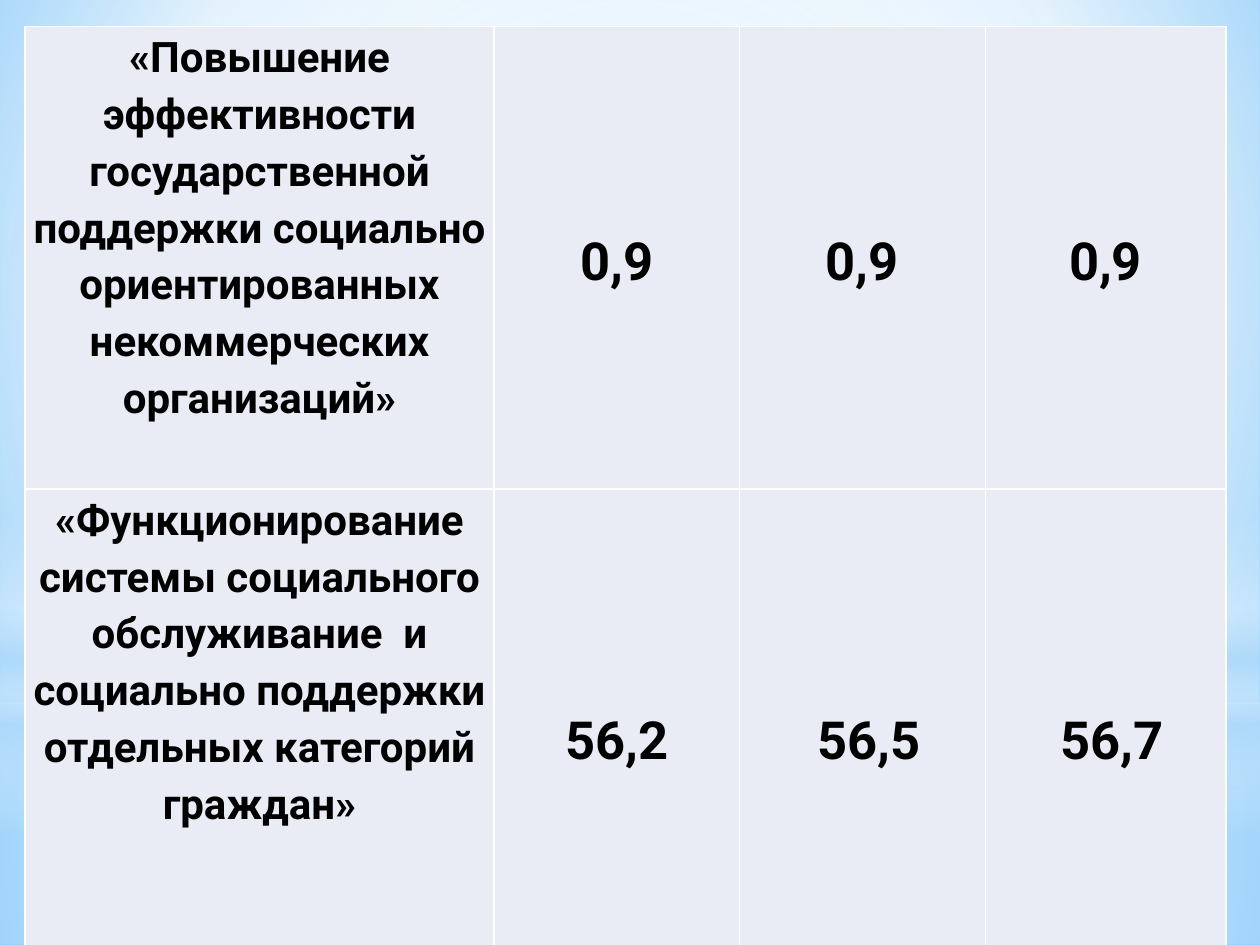
from lxml.etree import SubElement
from pptx import Presentation
from pptx.dml.color import RGBColor
from pptx.enum.shapes import MSO_SHAPE
from pptx.enum.text import MSO_ANCHOR, PP_ALIGN
from pptx.oxml.ns import qn
from pptx.util import Pt

COLORS = {
    "white": "FFFFFF",
    "sky": "9ED5FF",
    "deep_sky": "5BB9FF",
    "haze": "B4DCFA",
    "cell": "E9EBF5",
    "text": "000000",
}
FONT = "Roboto"
WIDTH, HEIGHT = 720, 540
CENTER = (50, 50, 50, 50)
COLUMN_WIDTHS = (267.84, 140.4, 140.4, 137.52)
ROW_HEIGHTS = (264.24, 283.68)
ROWS = (
    ("«Повышение эффективности государственной поддержки социально "
     "ориентированных некоммерческих организаций»", "0,9", "0,9", "0,9"),
    ("«Функционирование системы социального обслуживание  и социально "
     "поддержки отдельных категорий граждан»", "56,2", " 56,5", " 56,7"),
)


def set_gradient(fill, element, stops, focus=None):
    """Fill with (position, color, opacity) stops in percent.

    The gradient is circular around the focus insets, or vertical without one.
    """
    fill.gradient()
    gradient = element.find(".//" + qn("a:gradFill"))
    for child in list(gradient):
        gradient.remove(child)
    stop_list = SubElement(gradient, qn("a:gsLst"))
    for position, color, opacity in stops:
        stop = SubElement(stop_list, qn("a:gs"), pos=str(position * 1000))
        value = SubElement(stop, qn("a:srgbClr"), val=COLORS[color])
        if opacity < 100:
            SubElement(value, qn("a:alpha"), val=str(opacity * 1000))
    if focus:
        circle = SubElement(gradient, qn("a:path"), path="circle")
        insets = {side: str(inset * 1000) for side, inset in zip("ltrb", focus)}
        SubElement(circle, qn("a:fillToRect"), **insets)
    else:
        SubElement(gradient, qn("a:lin"), ang="5400000", scaled="0")


def add_glow(slide, kind, top, height, stops, focus=CENTER):
    """Add a full-width, borderless shape with a gradient."""
    shape = slide.shapes.add_shape(kind, 0, Pt(top), Pt(WIDTH), Pt(height))
    shape.shadow.inherit = False
    shape.line.fill.background()
    set_gradient(shape.fill, shape.element, stops, focus)


def add_backdrop(slide):
    set_gradient(slide.background.fill, slide.element,
                 [(0, "sky", 100), (60, "white", 100), (100, "deep_sky", 100)],
                 (20, 10, 20, 60))
    horizon = 401.76
    add_glow(slide, MSO_SHAPE.RECTANGLE, horizon, HEIGHT - horizon,
             [(0, "white", 91), (37, "white", 76), (100, "haze", 79)])
    add_glow(slide, MSO_SHAPE.RECTANGLE, 0, horizon,
             [(0, "white", 89), (48, "white", 62), (100, "haze", 79)])
    add_glow(slide, MSO_SHAPE.RECTANGLE, 296.64, 180,
             [(0, "white", 0), (29, "white", 30), (45, "haze", 40),
              (55, "white", 26), (65, "haze", 60), (100, "white", 0)], None)
    add_glow(slide, MSO_SHAPE.OVAL, 126, horizon,
             [(0, "white", 100), (56, "white", 0)])


def write_text(cell, text, size, anchor):
    cell.vertical_anchor = anchor
    cell.margin_left = cell.margin_right = Pt(2.16)
    cell.margin_top = cell.margin_bottom = 0
    paragraph = cell.text_frame.paragraphs[0]
    paragraph.alignment = PP_ALIGN.CENTER
    paragraph.line_spacing = 1.15
    run = paragraph.add_run()
    run.text = text
    run.font.name = FONT
    run.font.size = Pt(size)
    run.font.bold = True
    run.font.color.rgb = RGBColor.from_string(COLORS["text"])


def style_cell(cell):
    """Give the cell white borders and its flat fill."""
    properties = cell._tc.get_or_add_tcPr()
    for side in ("lnL", "lnR", "lnT", "lnB"):
        line = SubElement(properties, qn("a:" + side), w=str(Pt(1)))
        solid = SubElement(line, qn("a:solidFill"))
        SubElement(solid, qn("a:srgbClr"), val=COLORS["white"])
    cell.fill.solid()
    cell.fill.fore_color.rgb = RGBColor.from_string(COLORS["cell"])


def add_budget_table(slide):
    table = slide.shapes.add_table(
        len(ROWS), len(COLUMN_WIDTHS), Pt(14.4), Pt(15.12),
        Pt(sum(COLUMN_WIDTHS)), Pt(sum(ROW_HEIGHTS))).table
    table.first_row = table.horz_banding = False
    for column, width in zip(table.columns, COLUMN_WIDTHS):
        column.width = Pt(width)
    for row, height, texts in zip(table.rows, ROW_HEIGHTS, ROWS):
        row.height = Pt(height)
        for index, (cell, text) in enumerate(zip(row.cells, texts)):
            style_cell(cell)
            if index == 0:
                write_text(cell, text, size=24, anchor=MSO_ANCHOR.TOP)
            else:
                write_text(cell, text, size=30, anchor=MSO_ANCHOR.MIDDLE)


def main():
    presentation = Presentation()
    presentation.slide_width, presentation.slide_height = Pt(WIDTH), Pt(HEIGHT)
    slide = presentation.slides.add_slide(presentation.slide_layouts[6])
    add_backdrop(slide)
    add_budget_table(slide)
    presentation.save("out.pptx")


if __name__ == "__main__":
    main()
